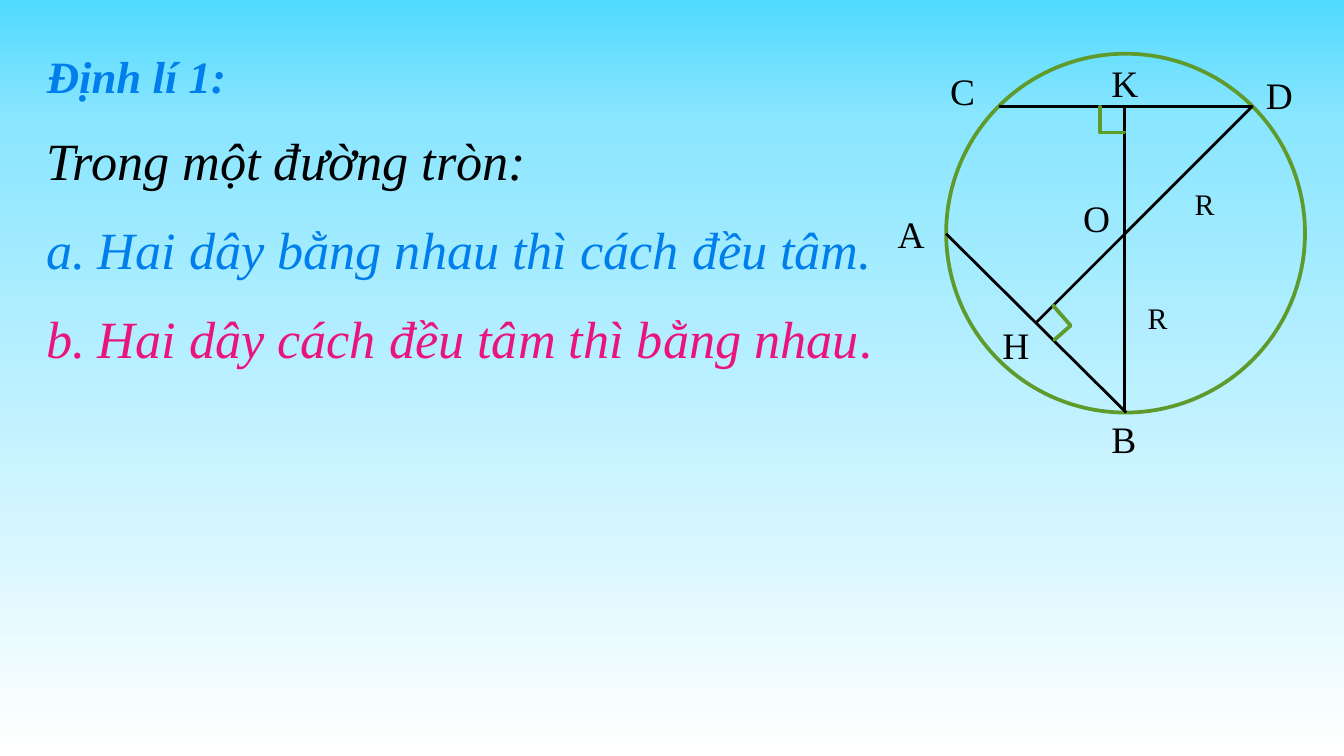
import copy

import pptx
import pptx.dml.color
import pptx.enum.shapes
import pptx.enum.text
import pptx.oxml
import pptx.oxml.ns
import pptx.util

Inches = pptx.util.Inches
Pt = pptx.util.Pt
RGBColor = pptx.dml.color.RGBColor
Shape = pptx.enum.shapes.MSO_SHAPE

SKY = RGBColor(0x51, 0xDA, 0xFF)
PALE_SKY = RGBColor(0x8B, 0xE6, 0xFF)
WHITE = RGBColor(0xFF, 0xFF, 0xFF)
BLACK = RGBColor(0x00, 0x00, 0x00)
BLUE = RGBColor(0x00, 0x7E, 0xEB)
PINK = RGBColor(0xEA, 0x15, 0x7A)
GREEN = RGBColor(0x5E, 0x9B, 0x2C)
LIGHT_GREEN = RGBColor(0x7F, 0xD1, 0x3B)
FONT = "Times New Roman"


def add_span(para, text, size=28, color=BLACK, bold=False, italic=False):
    span = para.add_run()
    span.text = text
    span.font.name = FONT
    span.font.size = Pt(size)
    span.font.color.rgb = color
    span.font.bold = bold
    span.font.italic = italic


def add_element(parent, tag, **attributes):
    child = pptx.oxml.parse_xml(f"<{tag} {pptx.oxml.ns.nsdecls('a')}/>")
    for name, value in attributes.items():
        child.set(name, value)
    parent.append(child)
    return child


class Sketch:
    def __init__(self, page):
        self.page = page
        self.shapes = page.shapes

    def background(self, stops):
        fill = self.page.background.fill
        fill.gradient()
        fill.gradient_angle = 270
        stop_list = self.page.element.xpath(".//p:bg//a:gsLst")[0]
        stop_list.insert(1, copy.deepcopy(stop_list[0]))
        for stop, (position, color) in zip(fill.gradient_stops, stops):
            stop.position = position
            stop.color.rgb = color

    def text_box(self, left, top, width, height, wrap=True):
        box = self.shapes.add_textbox(
            Inches(left), Inches(top), Inches(width), Inches(height)
        )
        box.text_frame.word_wrap = wrap
        box.text_frame.auto_size = pptx.enum.text.MSO_AUTO_SIZE.SHAPE_TO_FIT_TEXT
        return box.text_frame

    def theorem(self, left, top, width, height, lines):
        frame = self.text_box(left, top, width, height)
        for index, (numbered, spans) in enumerate(lines):
            para = frame.add_paragraph() if index else frame.paragraphs[0]
            settings = para._p.get_or_add_pPr()
            settings.set("marL", str(Inches(0.38)))
            settings.set("indent", str(-Inches(0.38)))
            spacing = add_element(settings, "a:spcBef")
            add_element(spacing, "a:spcPct", val="50000")
            if numbered:
                add_element(settings, "a:buFontTx")
                add_element(settings, "a:buAutoNum", type="alphaLcPeriod")
            for text, style in spans:
                add_span(para, text, **style)

    def label(self, text, left, top, width=0.41, height=0.44, size=20):
        frame = self.text_box(left, top, width, height, wrap=False)
        add_span(frame.paragraphs[0], text, size=size)

    def segment(self, start, end):
        line = self.shapes.add_connector(
            pptx.enum.shapes.MSO_CONNECTOR.STRAIGHT,
            *(Inches(value) for value in (*start, *end)),
        )
        line.line.color.rgb = BLACK
        line.line.width = Pt(1.5)
        add_element(line._element.spPr, "a:effectLst")

    def outline(self, kind, left, top, width, height):
        shape = self.shapes.add_shape(
            kind, Inches(left), Inches(top), Inches(width), Inches(height)
        )
        shape.shadow.inherit = False
        shape.fill.background()
        shape.line.color.rgb = GREEN
        shape.line.width = Pt(2)
        return shape

    def right_angle(self, left, top, width, height, rotation):
        mark = self.outline(Shape.HALF_FRAME, left, top, width, height)
        mark.fill.solid()
        mark.fill.fore_color.rgb = LIGHT_GREEN
        mark.adjustments[0] = 0
        mark.adjustments[1] = 0
        mark.rotation = rotation


def main():
    deck = pptx.Presentation()
    deck.slide_width = Inches(10)
    deck.slide_height = Inches(10 * 9 / 16)
    sketch = Sketch(deck.slides.add_slide(deck.slide_layouts[6]))
    sketch.background([(0, SKY), (0.16, PALE_SKY), (1, WHITE)])

    sketch.theorem(0.25, 0.31, 7, 2.63, [
        (False, [("Định lí 1:", dict(size=24, color=BLUE, bold=True, italic=True))]),
        (False, [("Trong một đường tròn:", dict(italic=True))]),
        (True, [("Hai dây bằng nhau thì cách đều tâm.", dict(color=BLUE, italic=True))]),
        (True, [
            ("Hai dây cách đều tâm thì bằng nhau", dict(color=PINK, italic=True)),
            (".", dict(color=PINK)),
        ]),
    ])

    sketch.outline(Shape.OVAL, 7.04, 0.4, 2.67, 2.67)
    points = {
        "A": (7.04, 1.74),
        "B": (8.38, 3.07),
        "C": (7.43, 0.79),
        "D": (9.32, 0.79),
        "H": (7.71, 2.4),
        "K": (8.37, 0.79),
    }
    for start, end in ("CD", "AB", "HD"):
        sketch.segment(points[start], points[end])
    sketch.segment((8.37, 3.05), points["K"])

    for name, left, top in [
        ("A", 6.58, 1.52),
        ("B", 8.17, 3.05),
        ("C", 6.97, 0.46),
        ("D", 9.32, 0.49),
        ("H", 7.36, 2.35),
        ("K", 8.17, 0.4),
        ("O", 7.96, 1.4),
    ]:
        sketch.label(name, left, top, width=0.39 if name in "BC" else 0.41)
    for left, top in [(8.44, 2.18), (8.79, 1.33)]:
        sketch.label("R", left, top, width=0.35, height=0.37, size=16)

    sketch.right_angle(8.18, 0.8, 0.19, 0.18, rotation=270)
    sketch.right_angle(7.76, 2.3, 0.16, 0.2, rotation=138.8)

    deck.save("out.pptx")


if __name__ == "__main__":
    main()
